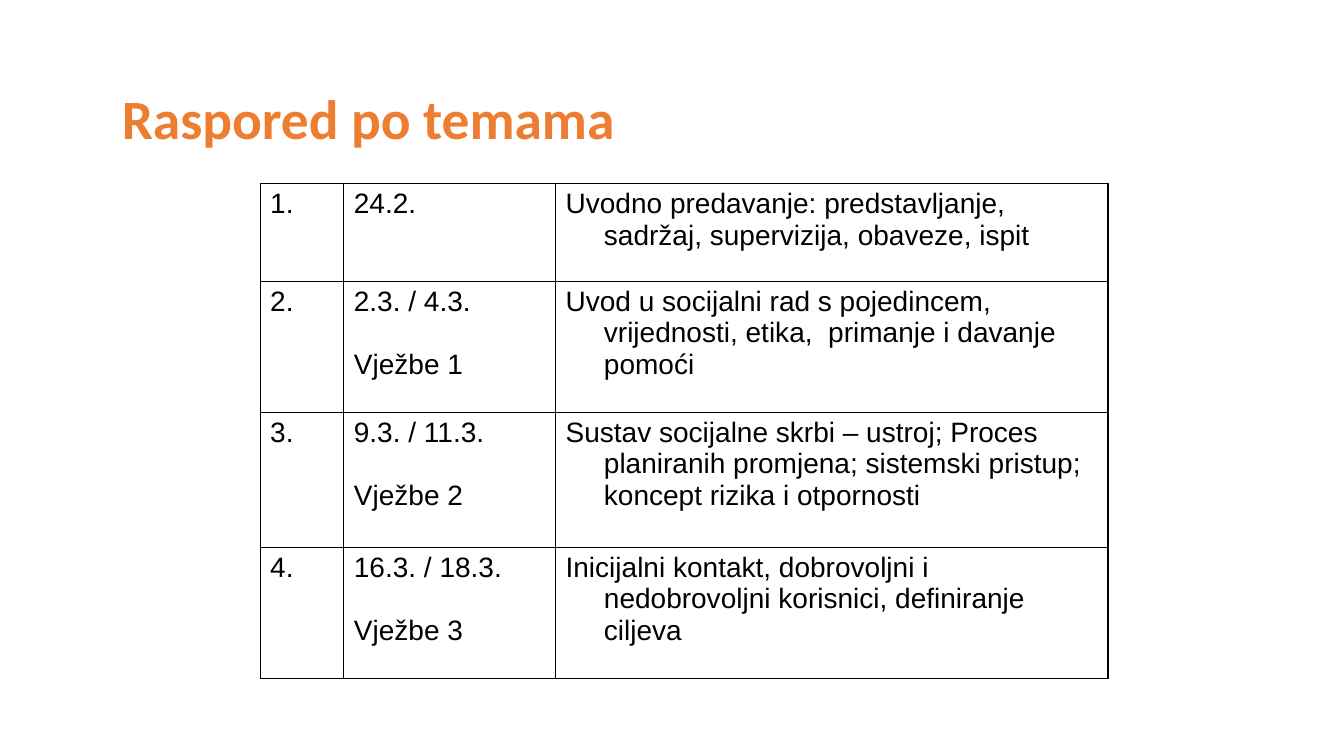
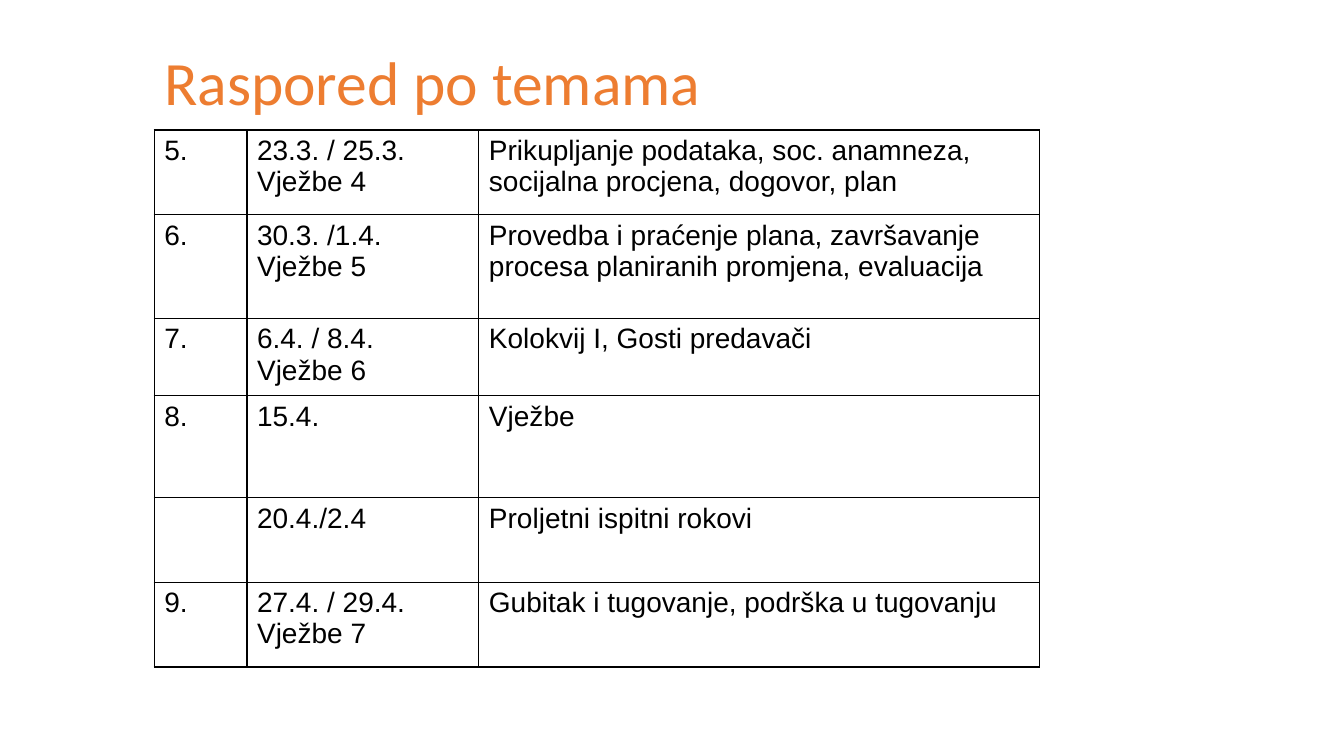
import pptx
import pptx.dml.color
import pptx.enum.text
import pptx.oxml.ns
import pptx.util
import lxml.etree

Inches = pptx.util.Inches
Pt = pptx.util.Pt

COLORS = {"title": "ED7D31", "text": "000000", "border": "000000"}
TITLE_FONT = "Calibri"
TABLE_FONT = "Arial"
TABLE_SIZE = 20
BORDER_WIDTH = 1

FIRST_TOPICS = [
    ("1.", ["24.2."], "Uvodno predavanje: predstavljanje, sadržaj, supervizija, obaveze, ispit"),
    ("2.", ["2.3. / 4.3.", "Vježbe 1"],
     "Uvod u socijalni rad s pojedincem, vrijednosti, etika,  primanje i davanje pomoći"),
    ("3.", ["9.3. / 11.3.", "Vježbe 2"],
     "Sustav socijalne skrbi – ustroj; Proces planiranih promjena; "
     "sistemski pristup; koncept rizika i otpornosti"),
    ("4.", ["16.3. / 18.3.", "Vježbe 3"],
     "Inicijalni kontakt, dobrovoljni i nedobrovoljni korisnici, definiranje ciljeva"),
]
LATER_TOPICS = [
    ("5.", ["23.3. / 25.3.", "Vježbe 4"],
     "Prikupljanje podataka, soc. anamneza, socijalna procjena, dogovor, plan"),
    ("6.", ["30.3. /1.4.", "Vježbe 5"],
     "Provedba i praćenje plana, završavanje procesa planiranih promjena, evaluacija"),
    ("7.", ["6.4. / 8.4.", "Vježbe 6"], "Kolokvij I, Gosti predavači"),
    ("8.", ["15.4."], "Vježbe"),
    ("", ["20.4./2.4"], "Proljetni ispitni rokovi"),
    ("9.", ["27.4. / 29.4.", "Vježbe 7"], "Gubitak i tugovanje, podrška u tugovanju"),
]


def add_span(para, text, font, size, color, bold=False):
    span = para.add_run()
    span.text = text
    span.font.name = font
    span.font.size = Pt(size)
    span.font.bold = bold
    span.font.color.rgb = pptx.dml.color.RGBColor.from_string(COLORS[color])


def add_title(page, box, size, bold=False):
    title = page.shapes.add_textbox(*map(Inches, box))
    frame = title.text_frame
    frame.word_wrap = True
    frame.vertical_anchor = pptx.enum.text.MSO_ANCHOR.MIDDLE
    para = frame.paragraphs[0]
    para.line_spacing = 0.9
    add_span(para, "Raspored po temama", TITLE_FONT, size, "title", bold)


def outline_cell(cell):
    """Draw all four borders, then leave the cell unfilled."""
    properties = cell._tc.get_or_add_tcPr()
    name = pptx.oxml.ns.qn
    for side in ("a:lnL", "a:lnR", "a:lnT", "a:lnB"):
        line = lxml.etree.SubElement(properties, name(side), w=str(Pt(BORDER_WIDTH)))
        fill = lxml.etree.SubElement(line, name("a:solidFill"))
        lxml.etree.SubElement(fill, name("a:srgbClr"), val=COLORS["border"])
    cell.fill.background()


def fill_cell(cell, lines, hanging, gap):
    """Write one paragraph per line, with a hanging indent in inches and a gap in points."""
    outline_cell(cell)
    frame = cell.text_frame
    for index, text in enumerate(lines):
        para = frame.add_paragraph() if index else frame.paragraphs[0]
        if hanging:
            properties = para._p.get_or_add_pPr()
            properties.set("marL", str(Inches(hanging)))
            properties.set("indent", str(-Inches(hanging)))
        if index:
            para.space_before = Pt(gap)
        if text:
            add_span(para, text, TABLE_FONT, TABLE_SIZE, "text")


def add_schedule(page, left, top, widths, heights, topics, hanging=0, gap=0):
    shape = page.shapes.add_table(
        len(heights), len(widths), Inches(left), Inches(top),
        Inches(sum(widths)), Inches(sum(heights)))
    table = shape.table
    table.first_row = False
    table.horz_banding = False
    for column, width in zip(table.columns, widths):
        column.width = Inches(width)
    for row, height, (number, dates, topic) in zip(table.rows, heights, topics):
        row.height = Inches(height)
        for cell, lines in zip(row.cells, ([number], dates, [topic])):
            fill_cell(cell, lines, hanging, gap)


def add_first_page(deck):
    page = deck.slides.add_slide(deck.slide_layouts[6])
    add_title(page, (1.11, 0.72, 11.56, 0.97), 39.6, bold=True)
    add_schedule(page, 2.58, 1.82, [0.83, 2.1, 5.48], [0.97, 1.3, 1.34, 1.3],
                 FIRST_TOPICS, hanging=0.38, gap=22.5)


def add_second_page(deck):
    page = deck.slides.add_slide(deck.slide_layouts[6])
    add_title(page, (1.53, 0.4, 11.23, 0.9), 44)
    add_schedule(page, 1.53, 1.29, [0.92, 2.3, 5.56],
                 [0.84, 1.03, 0.72, 1.01, 0.84, 0.84], LATER_TOPICS)


def main():
    deck = pptx.Presentation()
    deck.slide_width = Inches(13.33)
    deck.slide_height = Inches(7.5)
    add_first_page(deck)
    add_second_page(deck)
    deck.save("out.pptx")


if __name__ == "__main__":
    main()
